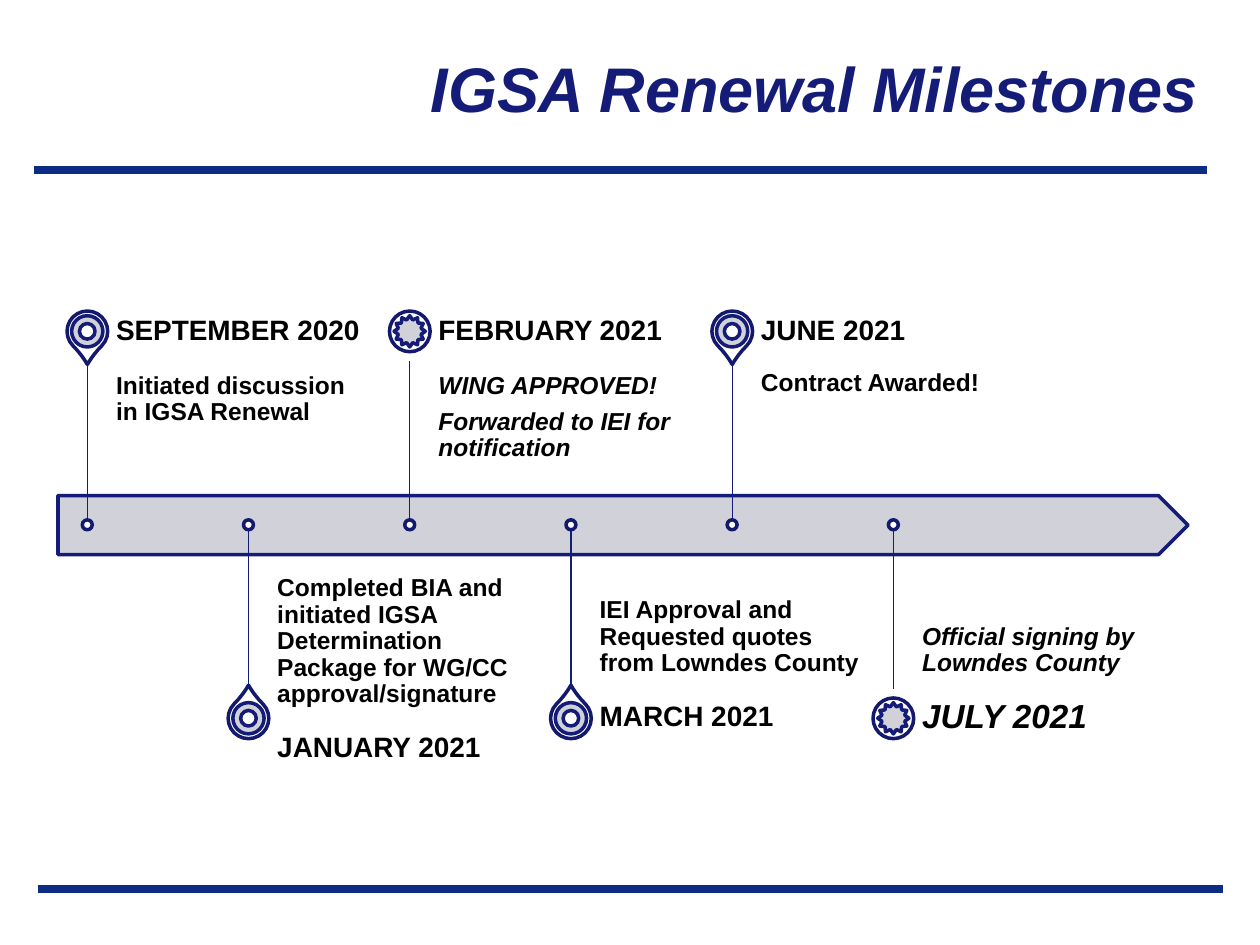
from dataclasses import dataclass

from lxml.etree import SubElement
from pptx import Presentation
from pptx.dml.color import RGBColor as Rgb
from pptx.enum.shapes import MSO_CONNECTOR as Link, MSO_SHAPE as Kind
from pptx.enum.text import MSO_ANCHOR as Anchor, PP_ALIGN as Align
from pptx.oxml.ns import qn
from pptx.util import Cm, Pt


@dataclass
class Theme:
    font: str = "Arial"
    navy: str = "151C77"
    rim: str = "13196C"
    rule: str = "0C2D83"
    gray: str = "CCCDD6"
    white: str = "FFFFFF"
    black: str = "000000"
    title: int = 36
    final: int = 19
    head: int = 16
    body: int = 14


theme = Theme()
deck = Presentation()
deck.slide_width, deck.slide_height = Cm(25.4), Cm(19.05)
slide = deck.slides.add_slide(deck.slide_layouts[6])
shapes = slide.shapes


def add_form(kind, box, fill, line, turn=0, alpha=None):
    form = shapes.add_shape(kind, *map(Cm, box))
    form.shadow.inherit = False
    form.rotation = turn
    form.fill.solid()
    form.fill.fore_color.rgb = Rgb.from_string(fill)
    form.line.color.rgb = Rgb.from_string(line)
    form.line.width = Pt(2)
    if alpha:
        tint = form.fill._xPr.find(qn("a:solidFill"))[0]
        SubElement(tint, qn("a:alpha"), val=str(alpha * 1000))
    return form


def add_text(box, lines, size, color, slant, anchor, pad, align=Align.LEFT, pitch=0.9):
    frame = shapes.add_textbox(*map(Cm, box)).text_frame
    frame.word_wrap = True
    frame.vertical_anchor = anchor
    (frame.margin_left, frame.margin_top,
     frame.margin_right, frame.margin_bottom) = map(Cm, pad)
    for i, line in enumerate(lines):
        para = frame.add_paragraph() if i else frame.paragraphs[0]
        para.alignment = align
        para.line_spacing = pitch
        if i:
            para.space_before = Pt(5.5)
        run = para.add_run()
        run.text = line
        font = run.font
        font.name, font.size = theme.font, Pt(size)
        font.bold, font.italic = True, slant
        font.color.rgb = Rgb.from_string(color)


# Timeline grid, in centimetres
left, step, axis = 1.76, 3.25, 10.58
reach, gap = 3.31, 3.9
pin, ring, dot = 0.82, 0.63, 0.2
wide, tall, high = 5.36, 3.32, 1.16

# Title
add_text((4.04, 0.36, 20.37, 2.82), ["IGSA Renewal Milestones"], theme.title,
         theme.navy, True, Anchor.MIDDLE, (0.25, 0.13, 0.25, 0.13), Align.RIGHT, 1)

# Arrow bar
add_form(Kind.PENTAGON, (1.17, 9.99, 22.78, 1.19), theme.gray, theme.navy, alpha=90)

# Milestones: date, notes, key event, date size, shift of the text
marks = [
    ("SEPTEMBER 2020", ["Initiated discussion in IGSA Renewal"], False, theme.head, 0),
    ("JANUARY 2021", ["Completed BIA and initiated IGSA Determination "
                      "Package for WG/CC approval/signature"], False, theme.head, 0.62),
    ("FEBRUARY 2021", ["WING APPROVED!", "Forwarded to IEI for notification"],
     True, theme.head, 0),
    ("MARCH 2021", ["IEI Approval and Requested quotes from Lowndes County"],
     False, theme.head, 0),
    ("JUNE 2021", ["Contract Awarded!"], False, theme.head, 0),
    ("JULY 2021", ["Official signing by Lowndes County"], True, theme.final, 0),
]
rules = [((0.76, 17.93), (24.66, 17.93), theme.rule, 4.5),
         ((0.69, 3.43), (24.33, 3.43), theme.rule, 4.5)]

for i, (date, notes, key, size, shift) in enumerate(marks):
    x, above = left + i * step, i % 2 == 0
    side = -1 if above else 1
    y, end = axis + side * gap, axis + side * reach
    rules.append(((x, axis), (x, end), theme.navy, 0.75))

    # Marker
    shell = add_form(Kind.OVAL if key else Kind.TEAR,
                     (x - pin / 2, y - pin / 2, pin, pin), theme.white, theme.rim,
                     135 if above else 315)
    if not key:
        shell.adjustments[0] = 1.15
    add_form(Kind.STAR_12_POINT if key else Kind.DONUT,
             (x - ring / 2, y - ring / 2, ring, ring), theme.gray, theme.navy, alpha=90)

    # Notes and date
    top = (end if above else axis) + shift
    add_text((x + 0.58, top, wide, tall), notes, theme.body, theme.black, key,
             Anchor.TOP if above else Anchor.BOTTOM,
             (0, 0.25, 0.25, 0.38) if above else (0, 0.38, 0, 0.25))
    top = (end - high if above else end) + shift
    add_text((x + 0.58, top, wide, high), [date], size, theme.black,
             size == theme.final, Anchor.MIDDLE, (0, 0, 0.28, 0))

# Rules and stems
for start, stop, color, width in rules:
    line = shapes.add_connector(Link.STRAIGHT, *map(Cm, start + stop))
    line.line.color.rgb = Rgb.from_string(color)
    line.line.width = Pt(width)
    SubElement(line._element.spPr, qn("a:effectLst"))

# Dots on the bar
for i in range(len(marks)):
    add_form(Kind.OVAL, (left + i * step - dot / 2, axis - dot / 2, dot, dot),
             theme.white, theme.rim)

deck.save("out.pptx")
